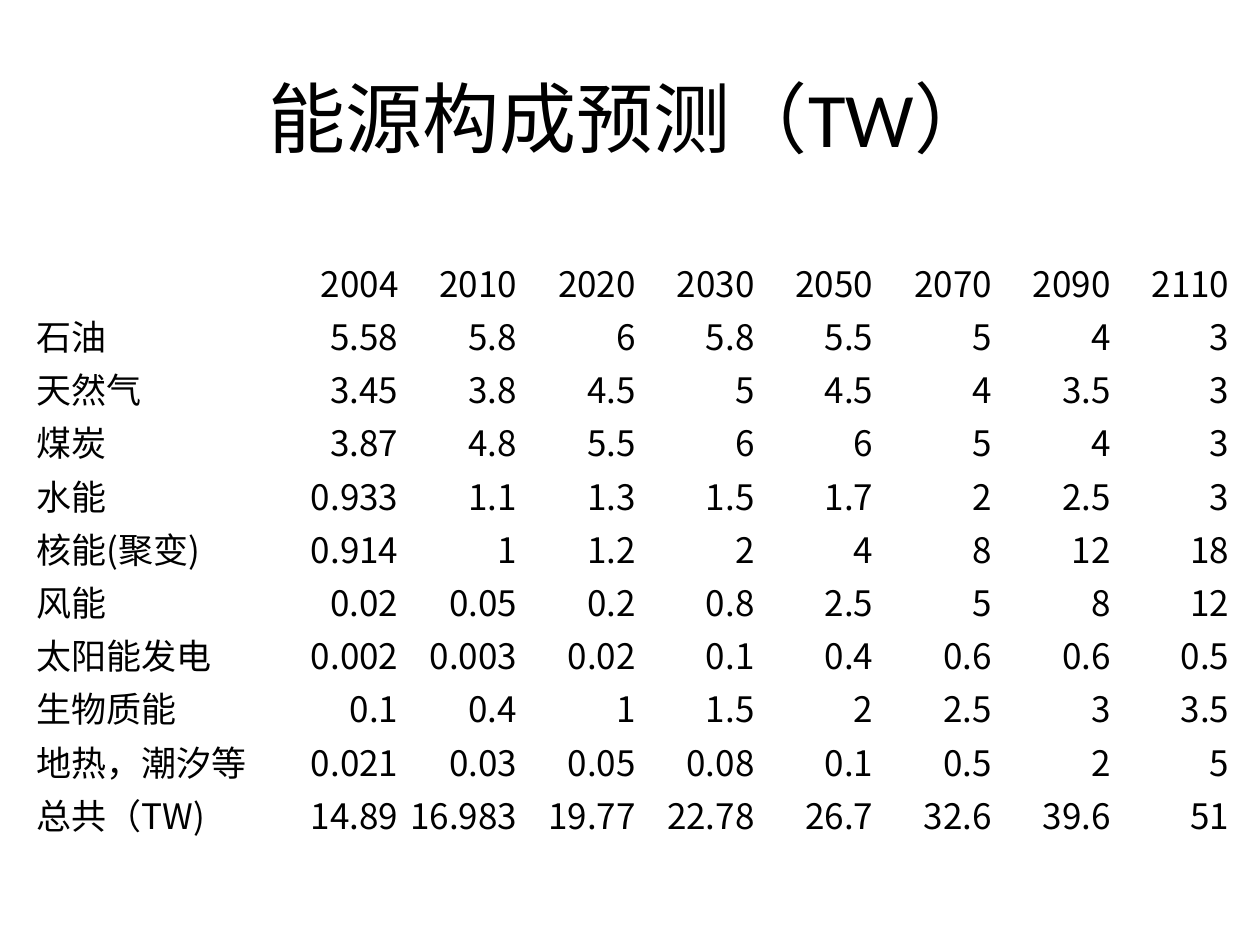
from pptx import Presentation
from pptx.dml.color import RGBColor
from pptx.enum.text import MSO_ANCHOR, PP_ALIGN
from pptx.oxml.ns import qn
from pptx.util import Inches, Pt

MIDDLE = MSO_ANCHOR.MIDDLE
LEFT, CENTER, RIGHT = PP_ALIGN.LEFT, PP_ALIGN.CENTER, PP_ALIGN.RIGHT
CJK_FONT = "Noto Sans CJK SC"

ENERGY_ROWS = [
    ["", "2004", "2010", "2020", "2030", "2050", "2070", "2090", "2110"],
    ["石油", "5.58", "5.8", "6", "5.8", "5.5", "5", "4", "3"],
    ["天然气", "3.45", "3.8", "4.5", "5", "4.5", "4", "3.5", "3"],
    ["煤炭", "3.87", "4.8", "5.5", "6", "6", "5", "4", "3"],
    ["水能", "0.933", "1.1", "1.3", "1.5", "1.7", "2", "2.5", "3"],
    ["核能(聚变)", "0.914", "1", "1.2", "2", "4", "8", "12", "18"],
    ["风能", "0.02", "0.05", "0.2", "0.8", "2.5", "5", "8", "12"],
    ["太阳能发电", "0.002", "0.003", "0.02", "0.1", "0.4", "0.6", "0.6", "0.5"],
    ["生物质能", "0.1", "0.4", "1", "1.5", "2", "2.5", "3", "3.5"],
    ["地热，潮汐等", "0.021", "0.03", "0.05", "0.08", "0.1", "0.5", "2", "5"],
    ["总共（TW)", "14.89", "16.983", "19.77", "22.78", "26.7", "32.6", "39.6", "51"],
]


def format_text(text_frame, font_name, size, alignment, color="000000"):
    para = text_frame.paragraphs[0]
    para.alignment = alignment
    for span in para.runs:
        span.font.name = font_name
        span.font.size = Pt(size)
        span.font.bold = False
        span.font.color.rgb = RGBColor.from_string(color)
        east_asian = span.font._element.makeelement(qn("a:ea"), {"typeface": CJK_FONT})
        span.font._element.find(qn("a:latin")).addnext(east_asian)


deck = Presentation()
deck.slide_width, deck.slide_height = Inches(10), Inches(7.5)
page = deck.slides.add_slide(deck.slide_layouts[5])

title = page.shapes.title
title.left, title.top = Inches(0.5), Inches(0.3)
title.width, title.height = Inches(9), Inches(1.25)
title.text_frame.text = "能源构成预测（TW）"
title.text_frame.vertical_anchor = MIDDLE
format_text(title.text_frame, "Calibri", 44, CENTER)

label_width, table_width = 1.95, 9.49
year_count = len(ENERGY_ROWS[0]) - 1
table = page.shapes.add_table(
    len(ENERGY_ROWS), year_count + 1,
    Inches(0.28), Inches(2.02), Inches(table_width), Inches(4.65),
).table
table.first_row = False
table.horz_banding = False
for index, column in enumerate(table.columns):
    column.width = Inches((table_width - label_width) / year_count if index else label_width)

for row, values in zip(table.rows, ENERGY_ROWS):
    for index, (cell, value) in enumerate(zip(row.cells, values)):
        cell.fill.background()
        cell.vertical_anchor = MIDDLE
        cell.margin_left = cell.margin_right = cell.margin_top = Inches(0.01)
        cell.margin_bottom = 0
        cell.text_frame.text = value
        format_text(cell.text_frame, CJK_FONT, 20, RIGHT if index else LEFT)

deck.save("out.pptx")
